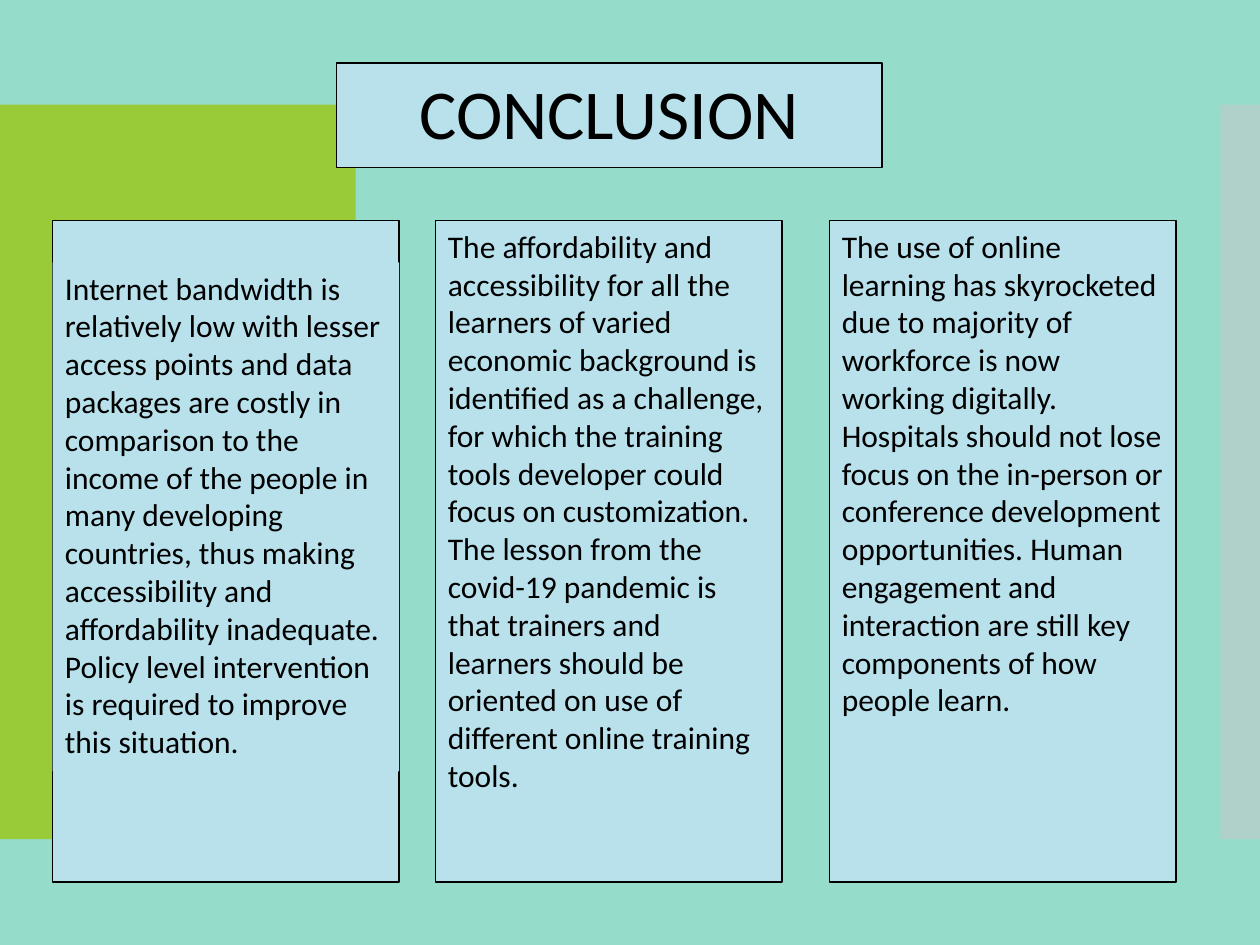
"""Build the conclusion slide with a title and three text cards."""
import pptx
import pptx.dml.color
import pptx.enum.shapes
import pptx.enum.text
import pptx.oxml
import pptx.oxml.ns
import pptx.util

Cm, Pt = pptx.util.Cm, pptx.util.Pt
NONE = pptx.enum.text.MSO_AUTO_SIZE.NONE
TOP = pptx.enum.text.MSO_ANCHOR.TOP
LEFT = pptx.enum.text.PP_ALIGN.LEFT
CENTER = pptx.enum.text.PP_ALIGN.CENTER
PANEL = "B8E1EC"


def paint(fmt, color):
    fmt.solid()
    fmt.fore_color.rgb = pptx.dml.color.RGBColor.from_string(color)


def add_rect(left, top, width, height, fill, line=None):
    sp = s.shapes.add_shape(pptx.enum.shapes.MSO_SHAPE.RECTANGLE,
                            Cm(left), Cm(top), Cm(width), Cm(height))
    sp.shadow.inherit = False
    paint(sp.fill, fill)
    if line:
        paint(sp.line.fill, line)
        sp.line.width = Pt(0.85)
    else:
        sp.line.fill.background()
    return sp


prs = pptx.Presentation()
prs.slide_width, prs.slide_height = Cm(25.4), Cm(19.05)
s = prs.slides.add_slide(prs.slide_layouts[5])
paint(s.background.fill, "96DCCB")

add_rect(0, 2.11, 7.17, 14.81, "99CB38")
side = add_rect(24.6, 2.11, 0.8, 14.81, "C8C8C8")
clr = side.fill._xPr.find(".//" + pptx.oxml.ns.qn("a:srgbClr"))
clr.append(pptx.oxml.parse_xml(
    f'<a:alpha {pptx.oxml.ns.nsdecls("a")} val="50000"/>'))

add_rect(6.78, 1.27, 11, 2.11, PANEL, "000000")
lefts = [1.06, 8.78, 16.72]
card_top, card_width = 4.45, 6.99
for left in lefts:
    add_rect(left, card_top, card_width, 13.33, PANEL, "000000")

title = s.shapes.title
title.left, title.top, title.width, title.height = Cm(6.78), Cm(1.27), Cm(11), Cm(1.96)
title.element.getparent().append(title.element)

bandwidth = add_rect(lefts[0], 5.29, card_width, 10.26, PANEL)
affordability, online = [
    s.shapes.add_textbox(Cm(left), Cm(card_top), Cm(card_width), Cm(11.79))
    for left in lefts[1:]
]

texts = [
    (title, 40, CENTER, "CONCLUSION"),
    (bandwidth, 18, LEFT,
     "Internet bandwidth is relatively low with lesser access points and data "
     "packages are costly in comparison to the income of the people in many "
     "developing countries, thus making accessibility and affordability "
     "inadequate. Policy level intervention is required to improve this situation."),
    (affordability, 18, LEFT,
     "The affordability and accessibility for all the learners of varied economic "
     "background is identified as a challenge, for which the training tools "
     "developer could focus on customization. The lesson from the covid-19 "
     "pandemic is that trainers and learners should be oriented on use of "
     "different online training tools."),
    (online, 18, LEFT,
     "The use of online learning has skyrocketed due to majority of workforce is "
     "now working digitally. Hospitals should not lose focus on the in-person or "
     "conference development opportunities. Human engagement and interaction are "
     "still key components of how people learn."),
]
for sp, size, align, text in texts:
    tf = sp.text_frame
    tf.word_wrap = True
    tf.auto_size = NONE
    tf.vertical_anchor = TOP
    p = tf.paragraphs[0]
    p.alignment = align
    r = p.add_run()
    r.text = text
    r.font.name = "Calibri"
    r.font.size = Pt(size)
    paint(r.font.fill, "000000")

prs.save("out.pptx")
